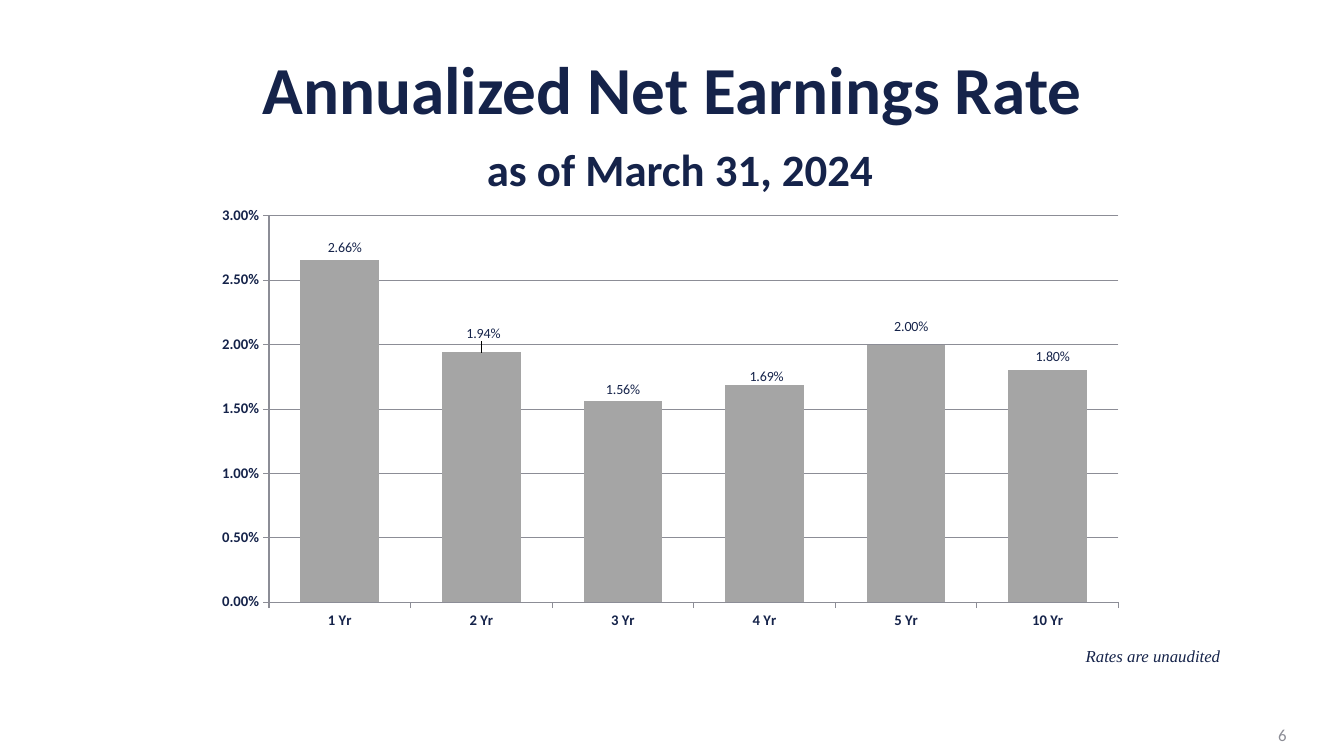
from dataclasses import dataclass

from lxml.etree import SubElement
from pptx import Presentation
from pptx.chart.data import CategoryChartData
from pptx.dml.color import RGBColor
from pptx.enum.chart import XL_CHART_TYPE, XL_LABEL_POSITION, XL_TICK_MARK
from pptx.enum.text import MSO_ANCHOR, PP_ALIGN
from pptx.oxml.ns import qn
from pptx.util import Emu, Pt

EMU_PER_PX = 9144  # 100 px to the inch
NAVY, BAR_GRAY, LINE_GRAY, PAGE_GRAY = "15234A", "A5A5A5", "8C8D96", "8C8D96"
PERCENT = "0.00%"


@dataclass(frozen=True)
class Area:
    left: int
    top: int
    width: int
    height: int

    def emu(self) -> list[Emu]:
        return [px(n) for n in (self.left, self.top, self.width, self.height)]


@dataclass(frozen=True)
class Span:
    text: str
    size: float
    color: str = NAVY
    name: str = "Calibri"
    bold: bool = False
    italic: bool = False


@dataclass(frozen=True)
class TextBox:
    area: Area
    lines: list[list[Span]]
    align: PP_ALIGN = PP_ALIGN.LEFT
    anchor: MSO_ANCHOR = MSO_ANCHOR.TOP
    spacing: float = 1.0


@dataclass(frozen=True)
class Rate:
    period: str
    value: float
    label_right: int  # label shift in px
    label_down: int


CHART_AREA = Area(208, 200, 905, 460)
PLOT = {"x": 0.065, "y": 0.031, "w": 0.931, "h": 0.833}
RATES = [
    Rate("1 Yr", 0.0266, 5, 0),
    Rate("2 Yr", 0.0194, 2, -7),
    Rate("3 Yr", 0.0156, 0, 0),
    Rate("4 Yr", 0.0169, 2, 4),
    Rate("5 Yr", 0.02, 5, -6),
    Rate("10 Yr", 0.018, 5, -2),
]
TEXT_BOXES = [
    TextBox(Area(67, 83, 1200, 89),
            [[Span("Annualized Net Earnings Rate", 48, bold=True)],
             [Span(" ", 48, bold=True),
              Span("as of March 31, 2024", 32, bold=True)]],
            PP_ALIGN.CENTER, MSO_ANCHOR.MIDDLE, 0.9),
    TextBox(Area(986, 709, 300, 40), [[Span("6", 12, PAGE_GRAY)]],
            PP_ALIGN.RIGHT, MSO_ANCHOR.MIDDLE),
    TextBox(Area(1067, 636, 233, 30),
            [[Span("Rates are unaudited", 12, name="Times New Roman", italic=True)]]),
]


def px(length: int) -> Emu:
    return Emu(length * EMU_PER_PX)


def rgb(color: str) -> RGBColor:
    return RGBColor.from_string(color)


def format_font(font, span: Span) -> None:
    formats = {"size": Pt(span.size), "name": span.name,
               "bold": span.bold, "italic": span.italic}
    for attribute, value in formats.items():
        setattr(font, attribute, value)
    font.color.rgb = rgb(span.color)


def add_text(page, box: TextBox) -> None:
    frame = page.shapes.add_textbox(*box.area.emu()).text_frame
    frame.word_wrap = True
    frame.vertical_anchor = box.anchor
    para = frame.paragraphs[0]
    para.alignment = box.align
    para.line_spacing = box.spacing
    for index, line in enumerate(box.lines):
        if index:
            para.add_line_break()
        for span in line:
            run = para.add_run()
            run.text = span.text
            format_font(run.font, span)


def add_manual_layout(layout, settings: dict) -> None:
    manual = SubElement(layout, qn("c:manualLayout"))
    for tag, value in settings.items():
        SubElement(manual, qn(f"c:{tag}")).set("val", str(value))


def format_axis(axis) -> None:
    axis.major_tick_mark = XL_TICK_MARK.OUTSIDE
    axis.minor_tick_mark = XL_TICK_MARK.NONE
    axis.format.line.color.rgb = rgb(LINE_GRAY)
    axis.format.line.width = Pt(0.75)
    format_font(axis.tick_labels.font, Span("", 10.5, bold=True))


def add_rate_chart(page) -> None:
    data = CategoryChartData(number_format=PERCENT)
    data.categories = [rate.period for rate in RATES]
    data.add_series("Series 1", [rate.value for rate in RATES])
    chart = page.shapes.add_chart(
        XL_CHART_TYPE.COLUMN_CLUSTERED, *CHART_AREA.emu(), data).chart
    chart.has_legend = chart.has_title = False
    format_font(chart.font, Span("", 18))

    # Axes and gridlines
    for axis in (chart.category_axis, chart.value_axis):
        format_axis(axis)
    rate_axis = chart.value_axis
    scale = {"minimum_scale": 0, "maximum_scale": 0.03, "major_unit": 0.005,
             "has_major_gridlines": True}
    for attribute, value in scale.items():
        setattr(rate_axis, attribute, value)
    rate_axis.major_gridlines.format.line.color.rgb = rgb(LINE_GRAY)
    rate_axis.major_gridlines.format.line.width = Pt(0.75)
    rate_axis.tick_labels.number_format = PERCENT
    rate_axis.tick_labels.number_format_is_linked = False

    # Bars
    plot = chart.plots[0]
    plot.gap_width = 80
    plot.vary_by_categories = False
    series = plot.series[0]
    series.format.fill.solid()
    series.format.fill.fore_color.rgb = rgb(BAR_GRAY)

    # Value labels, each shifted from its bar
    labels = series.data_labels
    labels.show_value = True
    labels.number_format = PERCENT
    labels.number_format_is_linked = False
    format_font(labels.font, Span("", 10))
    for index, rate in enumerate(RATES):
        label = series.points[index].data_label
        format_font(label.font, Span("", 10))
        label.position = XL_LABEL_POSITION.OUTSIDE_END
        element = labels._element.findall(qn("c:dLbl"))[index]
        layout = SubElement(element, qn("c:layout"))
        element.insert(1, layout)
        add_manual_layout(layout, {
            "x": round(rate.label_right / CHART_AREA.width, 4),
            "y": round(rate.label_down / CHART_AREA.height, 4)})

    # Inner plot area
    plot_area = chart._chartSpace.chart.plotArea
    layout = plot_area.find(qn("c:layout"))
    if layout is None:
        layout = SubElement(plot_area, qn("c:layout"))
        plot_area.insert(0, layout)
    add_manual_layout(layout, {"layoutTarget": "inner", "xMode": "edge",
                               "yMode": "edge", **PLOT})


def main() -> None:
    deck = Presentation()
    deck.slide_width, deck.slide_height = px(1333), px(750)
    page = deck.slides.add_slide(deck.slide_layouts[6])
    add_rate_chart(page)
    for box in TEXT_BOXES:
        add_text(page, box)
    deck.save("out.pptx")


if __name__ == "__main__":
    main()
